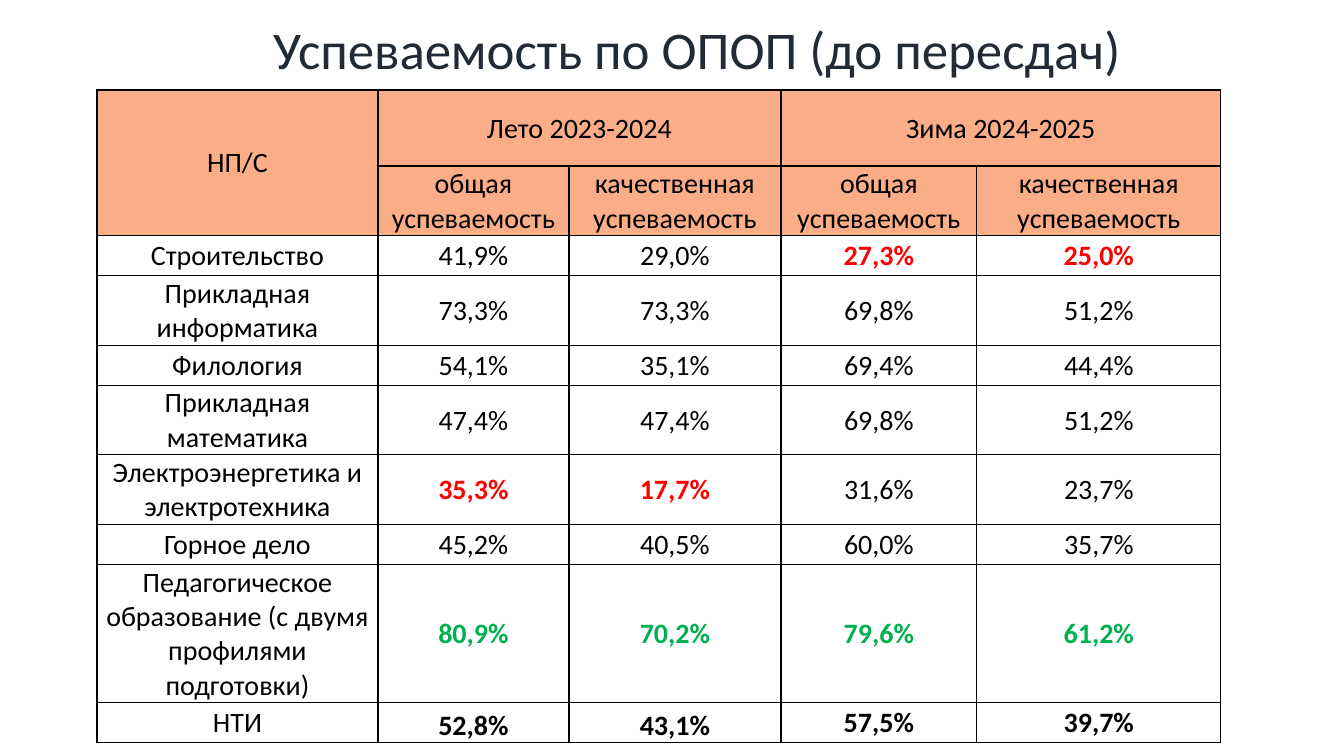
from lxml.etree import SubElement
from pptx import Presentation
from pptx.dml.color import RGBColor
from pptx.enum.text import MSO_ANCHOR as ANCHOR, MSO_AUTO_SIZE as AUTO, PP_ALIGN as ALIGN
from pptx.oxml.ns import qn
from pptx.util import Pt

PX = 914400 / 100.8
FONT = "Calibri"
BLACK, WHITE, RED, GREEN = "000000", "FFFFFF", "FF0000", "00B050"
NAVY, PEACH = "222A35", "FBAD87"

COLUMN_WIDTHS = [281, 191, 212, 196, 244]
HEADER_HEIGHTS = [76, 65]
TERMS = ["Лето 2023-2024", "Зима 2024-2025"]
MEASURES = ["общая успеваемость", "качественная успеваемость"]
# programme, row height, rates, highlight of each term (None for plain text)
PROGRAMMES = [
    ("Строительство", 40, "41,9% 29,0% 27,3% 25,0%", (None, RED)),
    ("Прикладная информатика", 65, "73,3% 73,3% 69,8% 51,2%", (None, None)),
    ("Филология", 40, "54,1% 35,1% 69,4% 44,4%", (None, None)),
    ("Прикладная математика", 65, "47,4% 47,4% 69,8% 51,2%", (None, None)),
    ("Электроэнергетика и электротехника", 70, "35,3% 17,7% 31,6% 23,7%", (RED, None)),
    ("Горное дело", 40, "45,2% 40,5% 60,0% 35,7%", (None, None)),
    ("Педагогическое образование (с двумя профилями подготовки)", 127,
     "80,9% 70,2% 79,6% 61,2%", (GREEN, GREEN)),
    ("НТИ", 40, "52,8% 43,1% 57,5% 39,7%", (BLACK, BLACK)),
]


def px(n):
    return round(n * PX)


def rgb(color):
    return RGBColor.from_string(color)


def write(tf, text, size=20, color=BLACK, bold=False, align=ALIGN.CENTER):
    p = tf.paragraphs[0]
    p.alignment = align
    r = p.add_run()
    r.text = text
    r.font.name, r.font.size, r.font.bold = FONT, Pt(size), bold
    r.font.color.rgb = rgb(color)
    return p


def add_borders(cell):
    tcPr = cell._tc.get_or_add_tcPr()
    for side in "LRTB":
        ln = SubElement(tcPr, qn(f"a:ln{side}"), w=str(Pt(1)))
        SubElement(SubElement(ln, qn("a:solidFill")), qn("a:srgbClr"), val=BLACK)


def style_cell(cell, fill):
    add_borders(cell)
    cell.fill.solid()
    cell.fill.fore_color.rgb = rgb(fill)
    cell.vertical_anchor = ANCHOR.MIDDLE
    cell.margin_left = cell.margin_right = cell.margin_top = px(1)
    cell.margin_bottom = 0


def add_title(s, x, y, w, h):
    title = s.shapes.title
    title.left, title.top, title.width, title.height = map(px, (x, y, w, h))
    tf = title.text_frame
    tf.word_wrap, tf.auto_size = True, AUTO.NONE
    tf.vertical_anchor = ANCHOR.MIDDLE
    p = write(tf, "Успеваемость по ОПОП (до пересдач)", size=37.8, color=NAVY, align=ALIGN.LEFT)
    p.line_spacing = 0.9
    p.add_line_break()


def fill_header(table):
    table.cell(0, 0).merge(table.cell(1, 0))
    write(table.cell(0, 0).text_frame, "НП/С")
    for i, term in enumerate(TERMS):
        col = 1 + 2 * i
        table.cell(0, col).merge(table.cell(0, col + 1))
        write(table.cell(0, col).text_frame, term)
        for j, measure in enumerate(MEASURES):
            write(table.cell(1, col + j).text_frame, measure)


def fill_programmes(table):
    for row, (name, _, rates, highlights) in enumerate(PROGRAMMES, len(HEADER_HEIGHTS)):
        write(table.cell(row, 0).text_frame, name)
        for i, rate in enumerate(rates.split()):
            color = highlights[i // 2]
            write(table.cell(row, i + 1).text_frame, rate,
                  color=color or BLACK, bold=color is not None)


def add_results_table(s, x, y):
    heights = HEADER_HEIGHTS + [height for _, height, _, _ in PROGRAMMES]
    table = s.shapes.add_table(len(heights), len(COLUMN_WIDTHS), px(x), px(y),
                               px(sum(COLUMN_WIDTHS)), px(sum(heights))).table
    table.first_row = table.horz_banding = False
    for column, width in zip(table.columns, COLUMN_WIDTHS):
        column.width = px(width)
    for i, (row, height) in enumerate(zip(table.rows, heights)):
        row.height = px(height)
        for cell in row.cells:
            style_cell(cell, PEACH if i < len(HEADER_HEIGHTS) else WHITE)
    fill_header(table)
    fill_programmes(table)
    for col in (1, 2):
        table.cell(len(heights) - 1, col).vertical_anchor = ANCHOR.BOTTOM


def main():
    prs = Presentation()
    prs.slide_width, prs.slide_height = px(1344), px(756)
    s = prs.slides.add_slide(prs.slide_layouts[5])
    add_title(s, 263, 39, 959, 101)
    add_results_table(s, 97, 90)
    prs.save("out.pptx")


if __name__ == "__main__":
    main()
